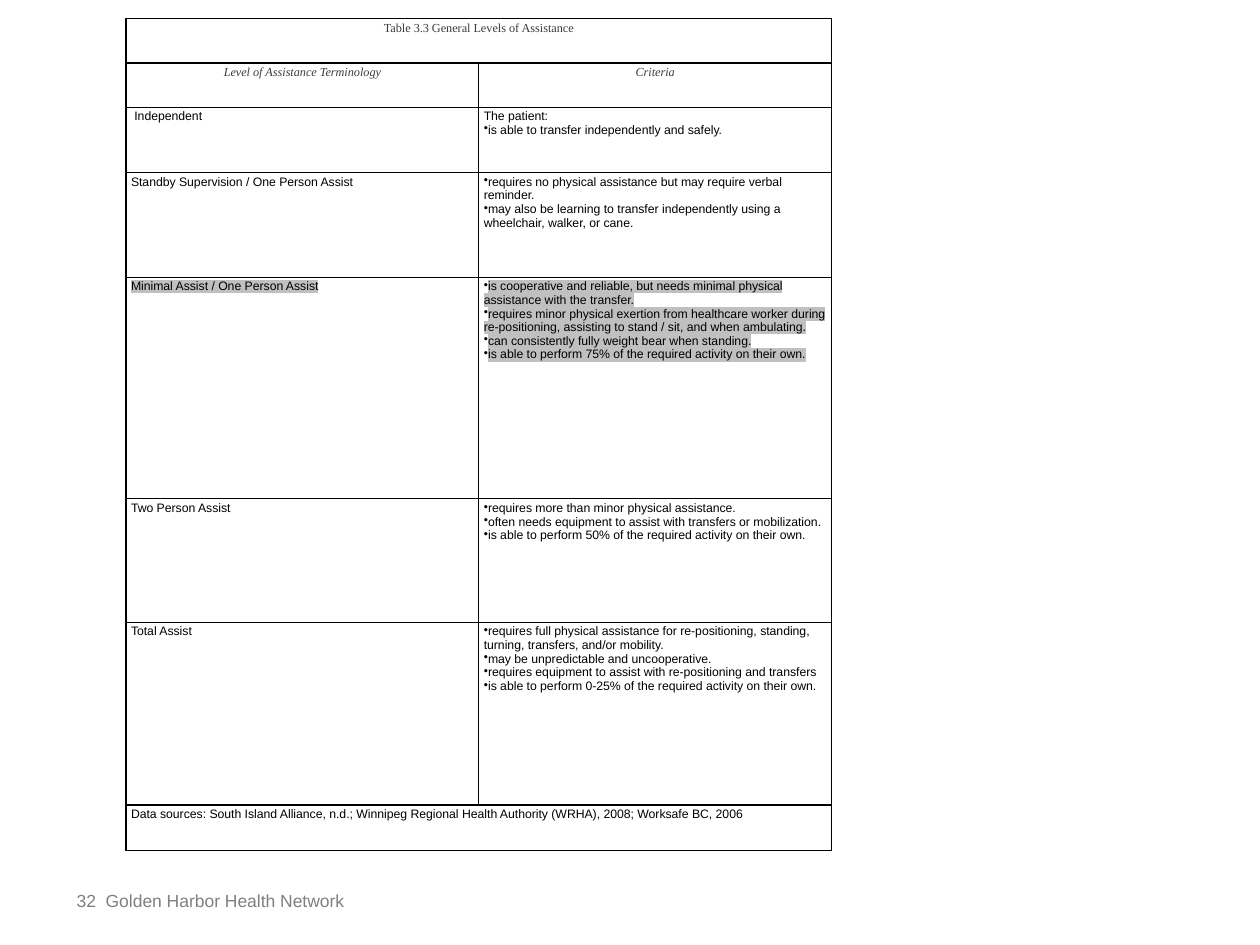
from dataclasses import dataclass

from lxml.etree import SubElement
from pptx import Presentation
from pptx.dml.color import RGBColor
from pptx.enum.text import MSO_ANCHOR, PP_ALIGN
from pptx.oxml import parse_xml
from pptx.oxml.ns import nsdecls, qn
from pptx.util import Inches, Pt

COLORS = {
    "black": "000000",
    "white": "FFFFFF",
    "heading": "373D3F",
    "footer": "808080",
    "highlight": "C0C0C0",
}
ROW_HEIGHTS = [0.35, 0.35, 0.52, 0.83, 1.76, 0.98, 1.45, 0.36]
COLUMN_WIDTH = 2.8


@dataclass
class Style:
    font: str = "Arial"
    size: float = 7
    color: str = "black"
    italic: bool = False
    centered: bool = False
    highlight: bool = False


@dataclass
class Level:
    name: str
    criteria: list[str]
    intro: str = ""
    highlight: bool = False


CAPTION = Style("Times New Roman", color="heading", centered=True)
HEADING = Style("Times New Roman", color="heading", italic=True, centered=True)
BODY = Style()
MARKED = Style(highlight=True)
FOOTER = Style(size=10, color="footer")

LEVELS = [
    Level(" Independent",
          ["is able to transfer independently and safely."],
          intro="The patient:"),
    Level("Standby Supervision / One Person Assist",
          ["requires no physical assistance but may require verbal reminder.",
           "may also be learning to transfer independently using a wheelchair, walker, or cane."]),
    Level("Minimal Assist / One Person Assist",
          ["is cooperative and reliable, but needs minimal physical assistance with the transfer.",
           "requires minor physical exertion from healthcare worker during re-positioning, "
           "assisting to stand / sit, and when ambulating.",
           "can consistently fully weight bear when standing.",
           "is able to perform 75% of the required activity on their own."],
          highlight=True),
    Level("Two Person Assist",
          ["requires more than minor physical assistance.",
           "often needs equipment to assist with transfers or mobilization.",
           "is able to perform 50% of the required activity on their own."]),
    Level("Total Assist",
          ["requires full physical assistance for re-positioning, standing, turning, "
           "transfers, and/or mobility.",
           "may be unpredictable and uncooperative.",
           "requires equipment to assist with re-positioning and transfers",
           "is able to perform 0-25% of the required activity on their own."]),
]


def write_paragraph(para, text: str, style: Style, bullet: bool = False) -> None:
    if bullet:
        properties = para._p.get_or_add_pPr()
        properties.set("marL", "0")
        properties.set("indent", "0")
        SubElement(properties, qn("a:buChar")).set("char", "•")
    para.alignment = PP_ALIGN.CENTER if style.centered else PP_ALIGN.LEFT
    span = para.add_run()
    span.text = text
    span.font.size = Pt(style.size)
    span.font.italic = style.italic
    span.font.color.rgb = RGBColor.from_string(COLORS[style.color])
    span.font.name = style.font
    if style.highlight:
        mark = parse_xml(f'<a:highlight {nsdecls("a")}>'
                         f'<a:srgbClr val="{COLORS["highlight"]}"/></a:highlight>')
        span._r.rPr.find(qn("a:latin")).addprevious(mark)


def write_cell(cell, text: str, style: Style) -> None:
    write_paragraph(cell.text_frame.paragraphs[0], text, style)


def write_criteria(cell, level: Level, style: Style) -> None:
    frame = cell.text_frame
    lines = [(text, True) for text in level.criteria]
    if level.intro:
        lines.insert(0, (level.intro, False))
    for index, (text, bullet) in enumerate(lines):
        para = frame.add_paragraph() if index else frame.paragraphs[0]
        write_paragraph(para, text, style, bullet)


def format_cell(cell) -> None:
    cell.margin_left = cell.margin_right = Inches(0.04)
    cell.margin_top = cell.margin_bottom = Inches(0.02)
    cell.fill.solid()
    cell.fill.fore_color.rgb = RGBColor.from_string(COLORS["white"])
    properties = cell._tc.get_or_add_tcPr()
    for index, side in enumerate(("lnL", "lnR", "lnT", "lnB")):
        properties.insert(index, parse_xml(
            f'<a:{side} {nsdecls("a")} w="{Pt(0.75)}"><a:solidFill>'
            f'<a:srgbClr val="{COLORS["black"]}"/></a:solidFill></a:{side}>'))


def add_levels_table(page) -> None:
    table = page.shapes.add_table(
        len(ROW_HEIGHTS), 2, Inches(1), Inches(0.15),
        Inches(2 * COLUMN_WIDTH), Inches(sum(ROW_HEIGHTS))).table
    table.first_row = table.horz_banding = False
    for column in table.columns:
        column.width = Inches(COLUMN_WIDTH)
    for row, height in zip(table.rows, ROW_HEIGHTS):
        row.height = Inches(height)
        for cell in row.cells:
            format_cell(cell)

    last = len(ROW_HEIGHTS) - 1
    for row in (0, last):
        table.cell(row, 0).merge(table.cell(row, 1))
    write_cell(table.cell(0, 0), "Table 3.3 General Levels of Assistance", CAPTION)
    write_cell(table.cell(1, 0), "Level of Assistance Terminology", HEADING)
    write_cell(table.cell(1, 1), "Criteria", HEADING)
    for row, level in enumerate(LEVELS, start=2):
        style = MARKED if level.highlight else BODY
        write_cell(table.cell(row, 0), level.name, style)
        write_criteria(table.cell(row, 1), level, style)
    write_cell(table.cell(last, 0),
               "Data sources: South Island Alliance, n.d.; Winnipeg Regional Health "
               "Authority (WRHA), 2008; Worksafe BC, 2006", BODY)


def add_footer(page) -> None:
    box = page.shapes.add_textbox(Inches(0.51), Inches(6.95), Inches(2.44), Inches(0.4))
    frame = box.text_frame
    frame.word_wrap = True
    frame.vertical_anchor = MSO_ANCHOR.MIDDLE
    para = frame.paragraphs[0]
    write_paragraph(para, "32  Golden Harbor Health Network", FOOTER)


def main() -> None:
    deck = Presentation()
    deck.slide_width = Inches(10)
    deck.slide_height = Inches(7.5)
    page = deck.slides.add_slide(deck.slide_layouts[6])
    add_footer(page)
    add_levels_table(page)
    deck.save("out.pptx")


if __name__ == "__main__":
    main()
